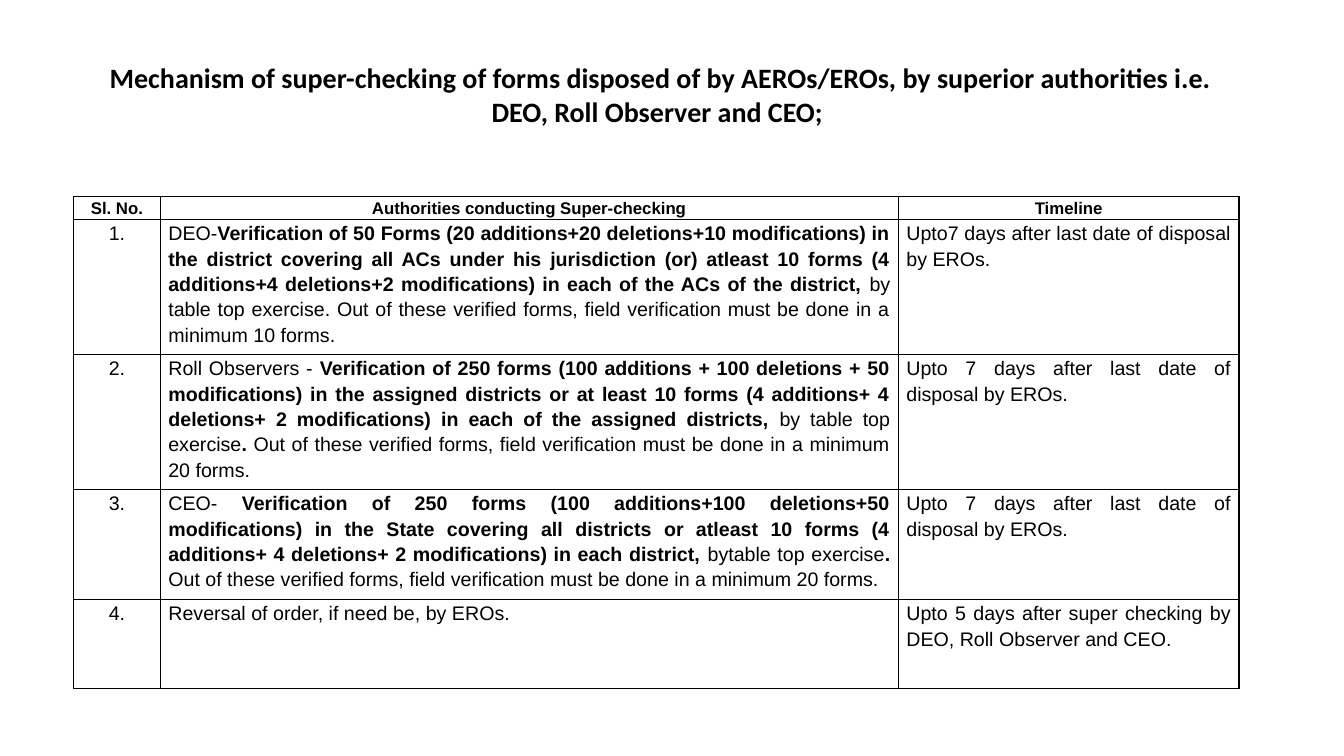
from lxml.etree import SubElement
from pptx import Presentation
from pptx.dml.color import RGBColor
from pptx.enum.text import MSO_ANCHOR as ANCHOR, PP_ALIGN as ALIGN
from pptx.oxml.ns import qn
from pptx.util import Inches, Pt

BLACK = RGBColor(0x00, 0x00, 0x00)
WHITE = RGBColor(0xFF, 0xFF, 0xFF)

TITLE = ("Mechanism of super-checking of forms disposed of by AEROs/EROs, "
         "by superior authorities i.e. DEO, Roll Observer and CEO; ")
HEADERS = ["Sl. No.", "Authorities conducting Super-checking", "Timeline"]
COLUMN_WIDTHS = [0.86, 7.32, 3.38]
ROW_HEIGHTS = [0.23, 1.34, 1.34, 1.09, 0.88]
SEVEN_DAYS = "Upto 7 days after last date of disposal by EROs."
BOLD_MARK = "**"

CHECKS = [
    ("DEO-**Verification of 50 Forms (20 additions+20 deletions+10 modifications) "
     "in the district covering all ACs under his jurisdiction (or) atleast 10 forms "
     "(4 additions+4 deletions+2 modifications) in each of the ACs of the district, **"
     "by table top exercise. Out of these verified forms, field verification must be "
     "done in a minimum 10 forms.",
     "Upto7 days after last date of disposal by EROs."),
    ("Roll Observers - **Verification of 250 forms (100 additions + 100 deletions + 50 "
     "modifications) in the assigned districts or at least 10 forms (4 additions+ 4 "
     "deletions+ 2 modifications) in each of the assigned districts, **"
     "by table top exercise**.** Out of these verified forms, field verification must "
     "be done in a minimum 20 forms.",
     SEVEN_DAYS),
    ("CEO- **Verification of 250 forms (100 additions+100 deletions+50 modifications) "
     "in the State covering all districts or atleast 10 forms (4 additions+ 4 "
     "deletions+ 2 modifications) in each district,** bytable top exercise**.** "
     "Out of these verified forms, field verification must be done in a minimum "
     "20 forms. ",
     SEVEN_DAYS),
    ("Reversal of order, if need be, by EROs.",
     "Upto 5 days after super checking by DEO, Roll Observer and CEO."),
]


def write_text(tf, text, font="Arial", size=14, bold=False, align=ALIGN.CENTER,
               line_spacing=1.15, space_after=0):
    p = tf.paragraphs[0]
    p.alignment = align
    p.line_spacing = line_spacing
    p.space_before = Pt(0)
    p.space_after = Pt(space_after)
    for i, part in enumerate(text.split(BOLD_MARK)):
        r = p.add_run()
        r.text = part
        r.font.name = font
        r.font.size = Pt(size)
        r.font.bold = bold or i % 2 == 1
        r.font.color.rgb = BLACK


def add_borders(cell):
    tc_pr = cell._tc.get_or_add_tcPr()
    for i, side in enumerate(("a:lnL", "a:lnR", "a:lnT", "a:lnB")):
        ln = tc_pr.makeelement(qn(side), {"w": str(Pt(1))})
        fill = SubElement(ln, qn("a:solidFill"))
        SubElement(fill, qn("a:srgbClr"), val=str(BLACK))
        tc_pr.insert(i, ln)


def fill_cell(cell, text, **text_format):
    cell.margin_left = cell.margin_right = Inches(0.08)
    cell.margin_top = cell.margin_bottom = 0
    cell.vertical_anchor = ANCHOR.TOP
    cell.fill.solid()
    cell.fill.fore_color.rgb = WHITE
    add_borders(cell)
    write_text(cell.text_frame, text, **text_format)


def add_title(slide):
    sp = slide.shapes.title
    sp.left, sp.top = Inches(0.73), Inches(0.55)
    sp.width, sp.height = Inches(11.64), Inches(0.77)
    tf = sp.text_frame
    tf.word_wrap = True
    tf.vertical_anchor = ANCHOR.TOP
    write_text(tf, TITLE, font="Calibri", size=20, bold=True, line_spacing=1.0)


def add_checks_table(slide):
    frame = slide.shapes.add_table(
        len(ROW_HEIGHTS), len(COLUMN_WIDTHS), Inches(0.73), Inches(1.95),
        Inches(sum(COLUMN_WIDTHS)), Inches(sum(ROW_HEIGHTS)))
    table = frame.table
    table.horz_banding = False
    for column, width in zip(table.columns, COLUMN_WIDTHS):
        column.width = Inches(width)
    for row, height in zip(table.rows, ROW_HEIGHTS):
        row.height = Inches(height)
    for col, header in enumerate(HEADERS):
        fill_cell(table.cell(0, col), header, size=12, bold=True)
    for row, (authority, timeline) in enumerate(CHECKS, 1):
        last = row == len(CHECKS)
        fill_cell(table.cell(row, 0), f"{row}.")
        fill_cell(table.cell(row, 1), authority, align=ALIGN.JUSTIFY,
                  space_after=10 if last else 6)
        fill_cell(table.cell(row, 2), timeline, align=ALIGN.JUSTIFY,
                  space_after=6 if row == 1 else 0)


def main():
    prs = Presentation()
    prs.slide_width, prs.slide_height = Inches(13.33), Inches(7.5)
    slide = prs.slides.add_slide(prs.slide_layouts[5])
    add_title(slide)
    add_checks_table(slide)
    prs.save("out.pptx")


if __name__ == "__main__":
    main()
